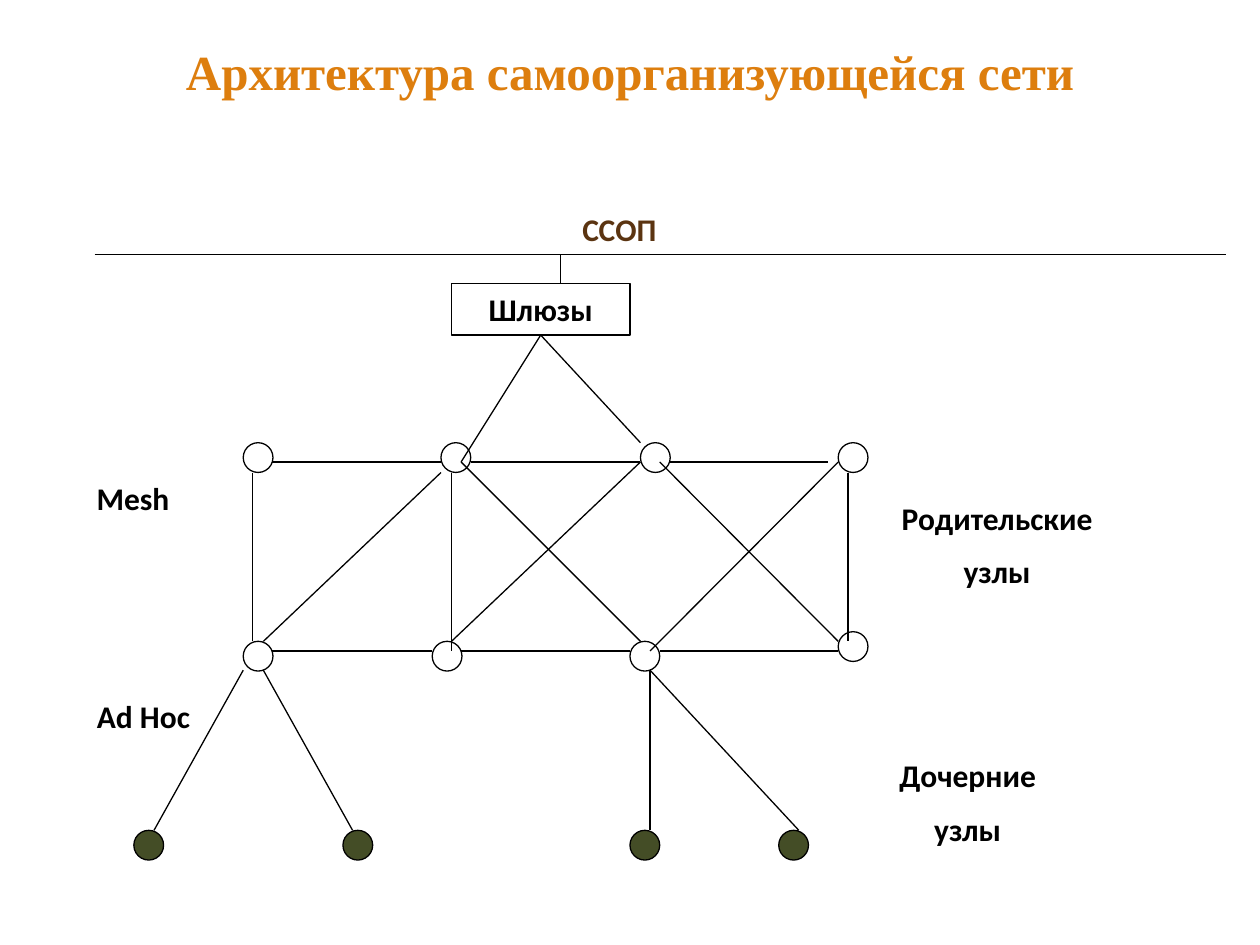
from typing import NamedTuple, Optional

from lxml.etree import SubElement
from pptx import Presentation
from pptx.dml.color import RGBColor as Rgb
from pptx.enum.shapes import MSO_CONNECTOR as Link, MSO_SHAPE as Kind
from pptx.enum.text import MSO_ANCHOR as Anchor, PP_ALIGN as Align
from pptx.oxml import parse_xml
from pptx.oxml.ns import qn
from pptx.util import Pt

HUES = {"title": "DD7E0E", "net": "5B3411", "ink": "000000",
        "parent": "FFFFFF", "child": "444D26"}
SIZE = 17  # node diameter
TOP, LOW, LEAF = 253, 366.5, 474.5  # node rows
ROW_A, ROW_B = 264, 372  # level links of the mesh
SHADOW = (
    '<a:effectLst xmlns:a="http://schemas.openxmlformats.org/drawingml/2006/main">'
    '<a:outerShdw blurRad="38100" dist="38100" dir="2700000" algn="tl">'
    '<a:srgbClr val="000000"><a:alpha val="43000"/></a:srgbClr>'
    '</a:outerShdw></a:effectLst>')


class Node(NamedTuple):
    x: float
    y: float
    hue: str = "parent"


class Edge(NamedTuple):
    x1: float
    y1: float
    x2: float
    y2: float


class Label(NamedTuple):
    x: float
    y: float
    wide: float
    high: float
    lines: tuple[str, ...]
    hue: str = "ink"
    size: float = 18
    face: str = "Calibri"


NODES = [
    *(Node(x, TOP) for x in (139, 252, 366, 479)),
    *(Node(x, LOW) for x in (139, 247, 360)),
    Node(479, 361),
    *(Node(x, LEAF, "child") for x in (76.5, 196, 360, 445)),
]

EDGES = [
    # parents to children
    Edge(139, 383, 88, LEAF), Edge(150.5, 383, 201.5, LEAF),
    Edge(371.5, 383, 371.5, LEAF), Edge(371.5, 383, 456.5, LEAF),
    # rising diagonals
    Edge(150.5, LOW, 252, 270), Edge(258, LOW, 366, ROW_A),
    Edge(371.5, ROW_B, 479, ROW_A),
    # falling diagonals
    Edge(263.5, ROW_A, 366, LOW), Edge(377, ROW_A, 479, LOW),
    # uprights
    Edge(144.5, 270, 144.5, LOW), Edge(258, 270, 258, ROW_B),
    Edge(484.5, 270, 484.5, LOW),
    # level links
    *(Edge(a, ROW_A, b, ROW_A) for a, b in ((155.5, 252), (269, 366), (383, 473))),
    *(Edge(a, ROW_B, b, ROW_B) for a, b in ((155.5, 247), (263.5, 360), (377, 479))),
    # public network and its tap
    Edge(54, 145.5, 700.5, 145.5), Edge(320.5, 145.5, 320.5, 162),
]

LABELS = [
    Label(0, 20, 720, 40, ("Архитектура самоорганизующейся сети",),
          "title", 28, "Times New Roman"),
    Label(303, 116.5, 102, 29, ("ССОП",), "net"),
    Label(25, 270, 102, 29, ("Mesh",)),
    Label(31, 394.5, 102, 29, ("Ad Hoc",)),
    Label(502, 428.5, 102, 61, ("Дочерние", "узлы")),
    Label(496, 281.5, 147.5, 61, ("Родительские", "узлы")),
]
GATE = Label(258, 162, 102, 29.5, ("Шлюзы",))


def tint(key: str) -> Rgb:
    return Rgb.from_string(HUES[key])


def trim(shape) -> None:
    """Give a shape or connector the thin black line."""
    shape.line.color.rgb = tint("ink")
    shape.line.width = Pt(0.75)


def add_node(shapes, node: Node) -> None:
    dot = shapes.add_shape(Kind.OVAL, Pt(node.x), Pt(node.y), Pt(SIZE), Pt(SIZE))
    dot.shadow.inherit = False
    dot.fill.solid()
    dot.fill.fore_color.rgb = tint(node.hue)
    trim(dot)


def add_edge(shapes, edge: Edge, start: Optional[object] = None) -> None:
    """Draw a line, joined to the bottom of start if given."""
    line = shapes.add_connector(Link.STRAIGHT, *map(Pt, edge))
    if start is not None:
        line.begin_connect(start, 2)
    trim(line)
    SubElement(line._element.spPr, qn("a:effectLst"))


def write(shape, label: Label) -> None:
    frame = shape.text_frame
    frame.word_wrap = True
    frame.vertical_anchor = Anchor.TOP
    for i, text in enumerate(label.lines):
        para = frame.paragraphs[0] if i == 0 else frame.add_paragraph()
        para.text = text
        para.alignment = Align.CENTER
        if i:
            para.space_before = Pt(9)
        font = para.font
        font.name, font.size, font.bold = label.face, Pt(label.size), True
        font.color.rgb = tint(label.hue)


def add_label(shapes, label: Label):
    box = shapes.add_textbox(*map(Pt, label[:4]))
    write(box, label)
    return box


def add_gate(shapes):
    gate = shapes.add_shape(Kind.RECTANGLE, *map(Pt, GATE[:4]))
    gate.shadow.inherit = False
    gate.fill.background()
    trim(gate)
    write(gate, GATE)
    return gate


def cast(box) -> None:
    """Put a soft shadow behind the letters of a box."""
    run = box.text_frame.paragraphs[0].runs[0]
    run.font.color.rgb = tint("title")
    run.font._element.append(parse_xml(SHADOW))


def main() -> None:
    deck = Presentation()
    deck.slide_width, deck.slide_height = Pt(720), Pt(540)
    shapes = deck.slides.add_slide(deck.slide_layouts[6]).shapes
    for node in NODES:
        add_node(shapes, node)
    for edge in EDGES:
        add_edge(shapes, edge)
    gate = add_gate(shapes)
    for x, y in ((263.5, ROW_A), (366, TOP)):
        add_edge(shapes, Edge(309, 191.5, x, y), gate)
    title, *_ = [add_label(shapes, label) for label in LABELS]
    cast(title)
    deck.save("out.pptx")


if __name__ == "__main__":
    main()
